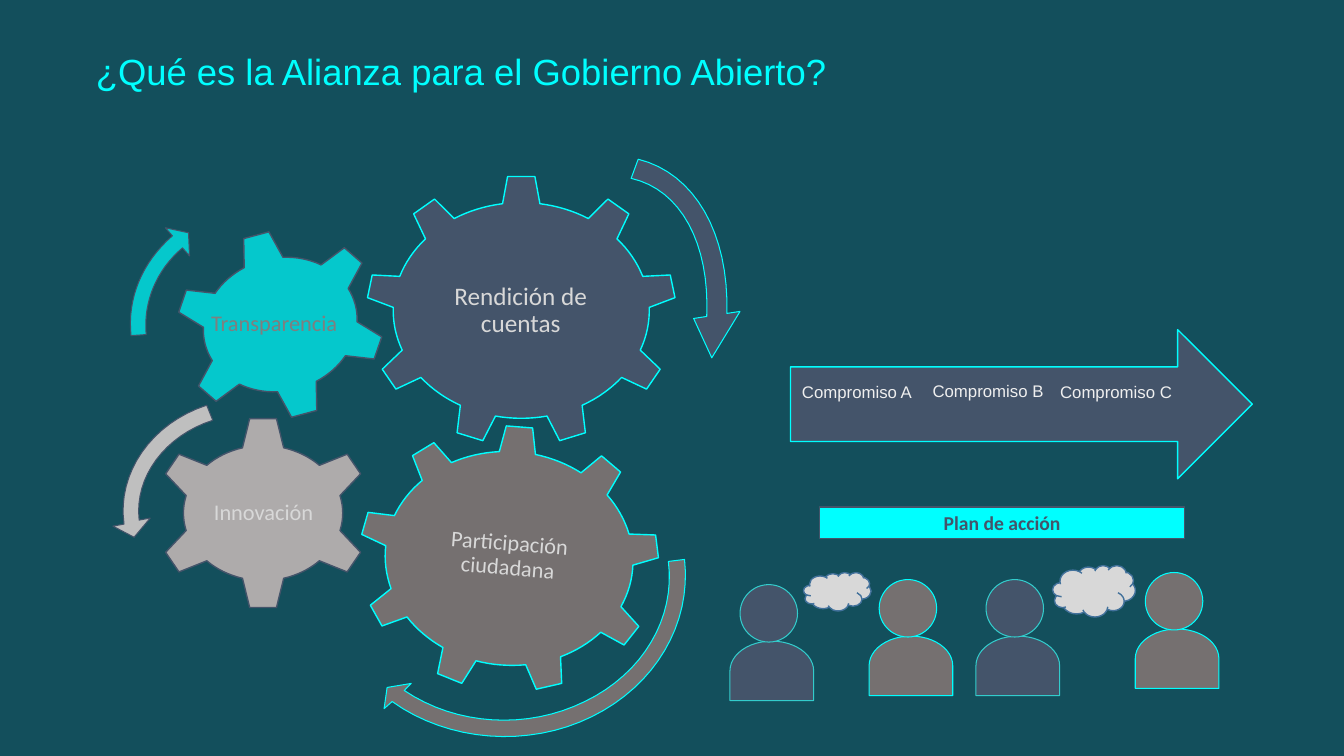
"""Build the slide about the Open Government Partnership."""
from dataclasses import dataclass
from math import cos, hypot, radians, sin

from lxml.etree import SubElement
from pptx import Presentation
from pptx.dml.color import RGBColor
from pptx.enum.shapes import MSO_SHAPE
from pptx.enum.text import MSO_ANCHOR, MSO_AUTO_SIZE, PP_ALIGN
from pptx.oxml.ns import qn
from pptx.util import Inches, Pt


@dataclass(frozen=True)
class Theme:
    background: str = "134F5C"
    cyan: str = "00FFFF"
    teal: str = "33CCCC"
    slate: str = "44546A"
    stone: str = "757070"
    ash: str = "AEABAB"
    silver: str = "BFBFBF"
    mist: str = "D8D8D8"
    smoke: str = "7F7F7F"
    pale: str = "EFEFEF"
    blue: str = "42719B"
    heading_font: str = "Arial"
    body_font: str = "Calibri"
    title_size: int = 26
    large_size: int = 18
    gear_size: int = 16
    plan_size: int = 14
    label_size: int = 12
    thick: float = 1
    thin: float = 0.75
    opacity: int = 69


THEME = Theme()


def color(code):
    return RGBColor.from_string(code)


def paint(shape, fill, line, width, opacity=100):
    shape.shadow.inherit = False
    shape.fill.solid()
    shape.fill.fore_color.rgb = color(fill)
    if opacity < 100:
        solid = shape.fill._xPr.find(qn("a:solidFill"))
        SubElement(solid[0], qn("a:alpha")).set("val", str(opacity * 1000))
    shape.line.color.rgb = color(line)
    shape.line.width = Pt(width)


def write(shape, text, size, font, ink, align=PP_ALIGN.CENTER, anchor=MSO_ANCHOR.MIDDLE,
          margins=(0.1, 0.05), spacing=1.0, bold=False):
    frame = shape.text_frame
    frame.text = text
    frame.word_wrap = True
    frame.auto_size = MSO_AUTO_SIZE.NONE
    frame.vertical_anchor = anchor
    frame.margin_left = frame.margin_right = Inches(margins[0])
    frame.margin_top = frame.margin_bottom = Inches(margins[1])
    paragraph = frame.paragraphs[0]
    paragraph.alignment = align
    paragraph.line_spacing = spacing
    run_font = paragraph.runs[0].font
    run_font.name = font
    run_font.size = Pt(size)
    run_font.bold = bold
    run_font.color.rgb = color(ink)


def add_preset(shapes, kind, box, fill, line, width):
    shape = shapes.add_shape(kind, *map(Inches, box))
    paint(shape, fill, line, width)
    return shape


def add_outline(slide, points, fill, line, width, opacity=100):
    corners = [(Inches(x), Inches(y)) for x, y in points]
    builder = slide.shapes.build_freeform(*corners[0])
    builder.add_line_segments(corners[1:], close=True)
    paint(builder.convert_to_shape(), fill, line, width, opacity)


def gear_points(center, radii, teeth, half_angle, height, taper, tilt):
    """Return an ellipse whose teeth stand square on their base chords."""
    def on_ellipse(degrees):
        return radii[0] * sin(radians(degrees)), -radii[1] * cos(radians(degrees))

    step = 360 / teeth
    points = []
    for tooth in range(teeth):
        middle = tooth * step
        left, right = on_ellipse(middle - half_angle), on_ellipse(middle + half_angle)
        across = right[0] - left[0], right[1] - left[1]
        length = hypot(*across)
        tip = ((left[0] + right[0]) / 2 + across[1] / length * height,
               (left[1] + right[1]) / 2 - across[0] / length * height)
        tips = [(tip[0] + side * taper * across[0] / 2, tip[1] + side * taper * across[1] / 2)
                for side in (-1, 1)]
        gap = step - 2 * half_angle
        arc = [on_ellipse(middle + half_angle + gap * part / 8) for part in range(1, 8)]
        points += [left, *tips, right, *arc]
    turn_cos, turn_sin = cos(radians(tilt)), sin(radians(tilt))
    return [(center[0] + x * turn_cos - y * turn_sin, center[1] + x * turn_sin + y * turn_cos)
            for x, y in points]


def add_gear(slide, center, radii, teeth, height, fill, line, tilt=0, opacity=100):
    half_angle, taper = {6: (15, 0.65), 9: (8.4, 0.73)}[teeth]
    points = gear_points(center, radii, teeth, half_angle, height, taper, tilt)
    add_outline(slide, points, fill, line, THEME.thick, opacity)


def add_curved_arrow(slide, segments, fill, line, opacity=100):
    """Draw straight segments (x, y) and Bezier segments (three points)."""
    points = []
    for segment in segments:
        if len(segment) == 2:
            points.append(segment)
            continue
        nodes = [points[-1], segment[:2], segment[2:4], segment[4:]]
        for part in range(1, 17):
            t = part / 16
            weights = (1 - t) ** 3, 3 * t * (1 - t) ** 2, 3 * t * t * (1 - t), t ** 3
            points.append(tuple(sum(weight * node[axis] for weight, node in zip(weights, nodes))
                                for axis in (0, 1)))
    add_outline(slide, points, fill, line, THEME.thin, opacity)


def add_text(slide, box, text, size, font, ink, rotation=0, **style):
    shape = slide.shapes.add_textbox(*map(Inches, box))
    shape.rotation = rotation
    write(shape, text, size, font, ink, **style)


def add_person(slide, left, top, fill, line):
    person = slide.shapes.add_group_shape().shapes
    body = add_preset(person, MSO_SHAPE.FLOWCHART_DELAY, (left + 0.02, top + 0.44, 0.59, 0.83),
                      fill, line, THEME.thin)
    body.rotation = 270
    add_preset(person, MSO_SHAPE.OVAL, (left, top, 0.57, 0.57), fill, line, THEME.thin)


def add_title(slide):
    title = slide.shapes.title
    title.left, title.top, title.width, title.height = map(Inches, (0.85, 0.44, 7.56, 0.44))
    write(title, "¿Qué es la Alianza para el Gobierno Abierto?", THEME.title_size,
          THEME.heading_font, THEME.cyan, PP_ALIGN.LEFT, MSO_ANCHOR.TOP)


def add_gears(slide):
    add_gear(slide, (5.05, 5.54), (1.23, 1.06), 9, 0.26, THEME.stone, THEME.cyan, tilt=4.5)
    add_gear(slide, (2.61, 5.09), (0.79, 0.67), 6, 0.29, THEME.ash, THEME.slate)
    add_gear(slide, (2.78, 3.22), (0.77, 0.66), 6, 0.28, THEME.cyan, THEME.slate,
             tilt=-15, opacity=THEME.opacity)
    add_gear(slide, (5.17, 3.08), (1.27, 1.07), 9, 0.27, THEME.slate, THEME.cyan)
    for box, text, size, ink, margin, rotation in (
            ((4.16, 4.84, 1.77, 1.35), "Participación ciudadana", THEME.gear_size, THEME.mist, 0.02, 4.5),
            ((2.08, 4.62, 1.07, 0.95), "Innovación", THEME.gear_size, THEME.mist, 0.02, 0),
            ((2.06, 2.69, 1.32, 1.05), "Transparencia", THEME.gear_size, THEME.smoke, 0.02, 0),
            ((4.25, 2.4, 1.83, 1.37), "Rendición de cuentas", THEME.large_size, THEME.mist, 0.05, 0)):
        add_text(slide, box, text, size, THEME.body_font, ink, rotation,
                 margins=(margin, margin), spacing=0.9)


def add_gear_arrows(slide):
    add_curved_arrow(slide, [
        (6.79, 5.55), (6.86, 6.19, 6.5, 6.8, 5.87, 7.11), (5.24, 7.42, 4.45, 7.36, 3.89, 6.96),
        (3.81, 7.03), (3.84, 6.82), (4.08, 6.78), (4.01, 6.85),
        (4.53, 7.2, 5.23, 7.24, 5.8, 6.96), (6.38, 6.68, 6.7, 6.13, 6.63, 5.57)],
        THEME.stone, THEME.cyan)
    add_curved_arrow(slide, [
        (2.05, 4.02), (2.11, 4.17), (1.64, 4.32, 1.33, 4.73, 1.38, 5.16), (1.49, 5.14),
        (1.33, 5.33), (1.12, 5.22), (1.23, 5.2), (1.16, 4.69, 1.5, 4.2, 2.05, 4.02)],
        THEME.silver, THEME.slate)
    add_curved_arrow(slide, [
        (1.3, 3.33), (1.26, 2.96, 1.41, 2.6, 1.71, 2.34), (1.64, 2.26), (1.87, 2.31),
        (1.88, 2.54), (1.81, 2.46), (1.55, 2.68, 1.42, 3, 1.45, 3.32)],
        THEME.cyan, THEME.slate, THEME.opacity)
    add_curved_arrow(slide, [
        (6.33, 1.58), (6.89, 1.72, 7.23, 2.31, 7.21, 3.11), (7.34, 3.09), (7.06, 3.55),
        (6.88, 3.16), (7.01, 3.14), (7.04, 2.41, 6.75, 1.88, 6.26, 1.77)],
        THEME.slate, THEME.cyan)


def add_action_plan(slide):
    plan = add_preset(slide.shapes, MSO_SHAPE.RECTANGLE, (8.13, 5.03, 3.62, 0.31),
                      THEME.cyan, THEME.slate, THEME.thick)
    write(plan, "Plan de acción", THEME.plan_size, THEME.body_font, THEME.slate, bold=True)
    for left, top, fill, line in ((8.72, 5.75, THEME.stone, THEME.cyan),
                                  (7.34, 5.8, THEME.slate, THEME.teal),
                                  (9.78, 5.75, THEME.slate, THEME.teal),
                                  (11.36, 5.68, THEME.stone, THEME.cyan)):
        add_person(slide, left, top, fill, line)
    for box in ((10.44, 5.61, 0.82, 0.51), (7.97, 5.68, 0.67, 0.38)):
        add_preset(slide.shapes, MSO_SHAPE.CLOUD, box, THEME.mist, THEME.blue, THEME.thick)
    add_preset(slide.shapes, MSO_SHAPE.RIGHT_ARROW, (7.84, 3.27, 4.58, 1.48),
               THEME.slate, THEME.cyan, THEME.thick)
    for letter, left, top in (("A", 7.84, 3.74), ("B", 9.14, 3.73), ("C", 10.41, 3.74)):
        add_text(slide, (left, top, 1.32, 0.54), f"Compromiso {letter}", THEME.label_size,
                 THEME.heading_font, THEME.pale, anchor=MSO_ANCHOR.TOP)


def main():
    presentation = Presentation()
    presentation.slide_width, presentation.slide_height = Inches(13.33), Inches(7.5)
    slide = presentation.slides.add_slide(presentation.slide_layouts[5])
    slide.background.fill.solid()
    slide.background.fill.fore_color.rgb = color(THEME.background)
    add_title(slide)
    add_gears(slide)
    add_gear_arrows(slide)
    add_action_plan(slide)
    presentation.save("out.pptx")


if __name__ == "__main__":
    main()
